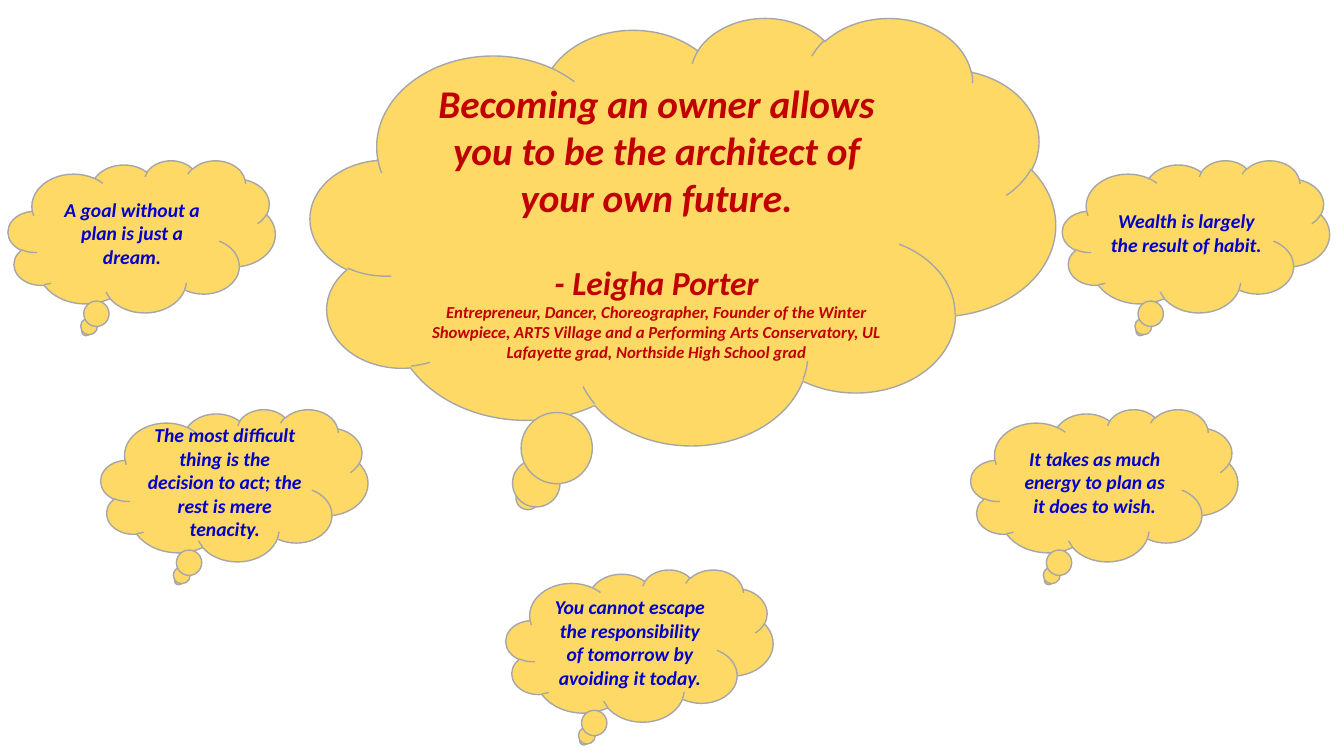
from dataclasses import dataclass

from pptx import Presentation
from pptx.dml.color import RGBColor
from pptx.enum import shapes, text
from pptx.util import Pt


@dataclass(frozen=True)
class Theme:
    font: str = "Calibri"
    cloud: RGBColor = RGBColor(0xFF, 0xD9, 0x66)
    edge: RGBColor = RGBColor(0xA6, 0xA6, 0xA6)
    blue: RGBColor = RGBColor(0x00, 0x00, 0xCC)
    red: RGBColor = RGBColor(0xC0, 0x00, 0x00)
    quote: int = 14
    main: int = 28
    name: int = 24
    note: int = 12


THEME = Theme()
SMALL = (190.8, 108.7)
UPPER, LOWER = 114.5, 292.3
QUOTES = [
    (5.8, UPPER, "A goal without a plan is just a dream."),
    (72, LOWER, "The most difficult thing is the decision to act; "
                "the rest is mere tenacity."),
    (758.9, UPPER, "Wealth is largely the result of habit."),
    (693.4, LOWER, "It takes as much energy to plan as it does to wish."),
    (361.4, 406.8, "You cannot escape the responsibility of tomorrow "
                   "by avoiding it today."),
]
# Each line: wording, type size, space before
LEAD = [
    ("Becoming an owner allows you to be the architect of your own future.",
     THEME.main, 0),
    ("- Leigha Porter", THEME.name, 29.3),
    ("Entrepreneur, Dancer, Choreographer, Founder of the Winter "
     "Showpiece, ARTS Village and a Performing Arts Conservatory, UL "
     "Lafayette grad, Northside High School grad", THEME.note, 0),
]


def add_line(para, words, size, color, gap):
    para.alignment = text.PP_ALIGN.CENTER
    para.space_before = Pt(gap)
    run = para.add_run()
    run.text = words
    font = run.font
    font.name, font.size = THEME.font, Pt(size)
    font.bold = font.italic = True
    font.color.rgb = color


def add_cloud(slide, box, lines, color):
    """Draw a thought cloud holding (words, size, gap) lines."""
    cloud = slide.shapes.add_shape(
        shapes.MSO_SHAPE.CLOUD_CALLOUT, *map(Pt, box))
    cloud.shadow.inherit = False
    cloud.fill.solid()
    cloud.fill.fore_color.rgb = THEME.cloud
    cloud.line.color.rgb = THEME.edge
    cloud.line.width = Pt(1)
    frame = cloud.text_frame
    frame.word_wrap = True
    frame.vertical_anchor = text.MSO_ANCHOR.MIDDLE
    for i, (words, size, gap) in enumerate(lines):
        para = frame.add_paragraph() if i else frame.paragraphs[0]
        add_line(para, words, size, color, gap)


def main():
    deck = Presentation()
    deck.slide_width, deck.slide_height = Pt(960), Pt(540)
    slide = deck.slides.add_slide(deck.slide_layouts.get_by_name("Blank"))
    for left, top, words in QUOTES:
        add_cloud(slide, (left, top, *SMALL),
                  [(words, THEME.quote, 0)], THEME.blue)
    add_cloud(slide, (221.8, 12.2, 532.1, 305.3), LEAD, THEME.red)
    deck.save("out.pptx")


if __name__ == "__main__":
    main()
